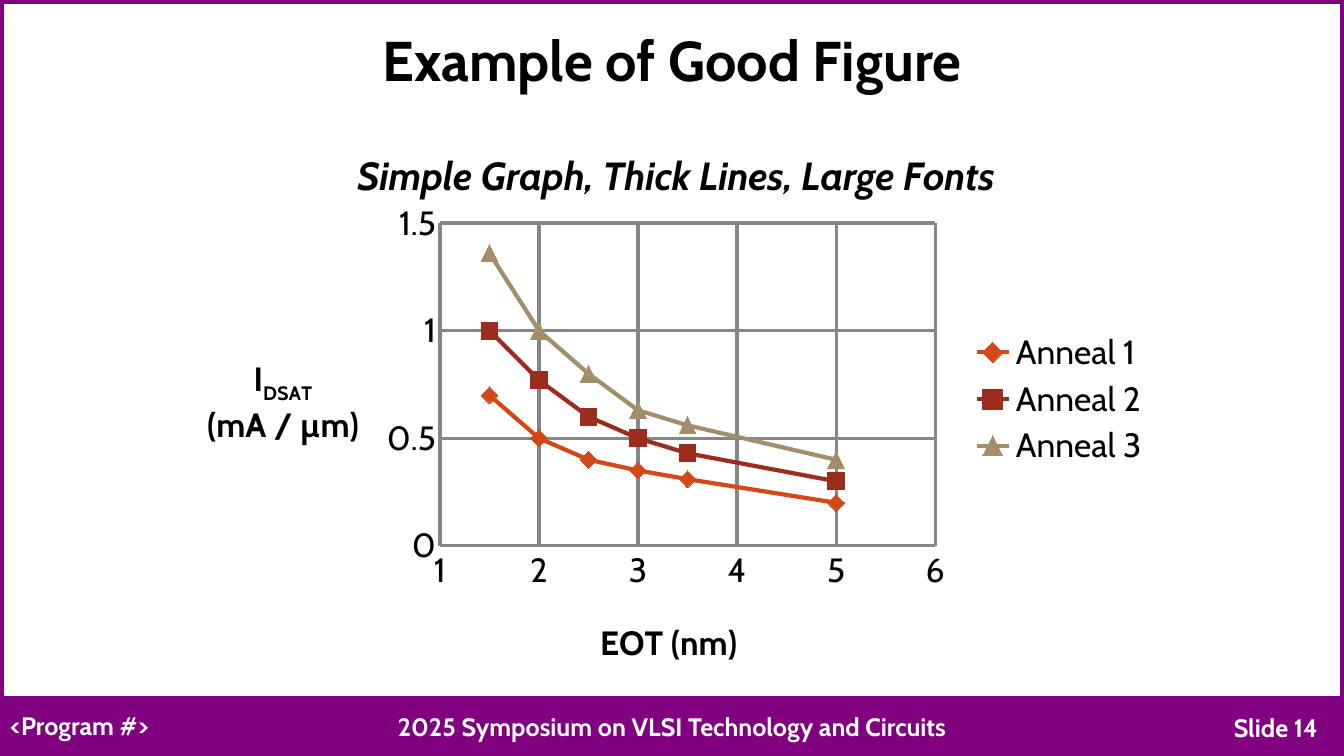
from lxml import etree
from pptx import Presentation
from pptx.chart.data import XyChartData
from pptx.dml.color import RGBColor
from pptx.enum.chart import (XL_CHART_TYPE, XL_LEGEND_POSITION,
                             XL_MARKER_STYLE, XL_TICK_MARK)
from pptx.enum.shapes import MSO_SHAPE
from pptx.enum.text import MSO_ANCHOR, PP_ALIGN
from pptx.oxml.ns import qn
from pptx.util import Inches, Pt

FONT = "Cabin"
PURPLE, WHITE, BLACK, GRAY = "800080", "FFFFFF", "000000", "868686"
EOT = [1.5, 2, 2.5, 3, 3.5, 5]
ANNEALS = [
    ("Anneal 1", [0.7, 0.5, 0.4, 0.35, 0.31, 0.2], "D34817", XL_MARKER_STYLE.DIAMOND),
    ("Anneal 2", [1, 0.77, 0.6, 0.5, 0.43, 0.3], "9B2D1F", XL_MARKER_STYLE.SQUARE),
    ("Anneal 3", [1.36, 1, 0.8, 0.63, 0.56, 0.4], "A28E6A", XL_MARKER_STYLE.TRIANGLE),
]


def color(hex_code):
    return RGBColor.from_string(hex_code)


def style_font(font, size, hex_code=BLACK, bold=False, italic=False):
    font.name, font.size = FONT, Pt(size)
    font.bold, font.italic = bold, italic
    font.color.rgb = color(hex_code)


def style_line(line, hex_code, width):
    line.color.rgb = color(hex_code)
    line.width = Pt(width)


def add_frame(page, left, top, width, height, line_width, fill=None):
    frame = page.shapes.add_shape(MSO_SHAPE.RECTANGLE, Inches(left), Inches(top),
                                  Inches(width), Inches(height))
    frame.shadow.inherit = False
    if fill:
        frame.fill.solid()
        frame.fill.fore_color.rgb = color(fill)
    else:
        frame.fill.background()
    style_line(frame.line, PURPLE, line_width)


def add_text(page, text, left, top, width, height, size, hex_code, align):
    box = page.shapes.add_textbox(Inches(left), Inches(top), Inches(width), Inches(height))
    box.text_frame.text = text
    box.text_frame.word_wrap = True
    box.text_frame.vertical_anchor = MSO_ANCHOR.MIDDLE
    para = box.text_frame.paragraphs[0]
    para.alignment = align
    style_font(para.runs[0].font, size, hex_code, bold=True)


def place(element, after, x, y, w=None, h=None):
    """Fix a chart part at fractions of the chart area."""
    for old in element.findall(qn("c:layout")):
        element.remove(old)
    layout = etree.Element(qn("c:layout"))
    manual = etree.SubElement(layout, qn("c:manualLayout"))
    settings = [("xMode", "edge"), ("yMode", "edge"), ("x", x), ("y", y), ("w", w), ("h", h)]
    if after is None:
        settings.insert(0, ("layoutTarget", "inner"))
        element.insert(0, layout)
    else:
        element.find(qn(after)).addnext(layout)
    for tag, value in settings:
        if value is not None:
            etree.SubElement(manual, qn("c:" + tag)).set("val", str(value))


def set_title(title, lines, size, x, y, italic=False):
    frame = title.text_frame
    frame.text = lines[0]
    for line in lines[1:]:
        frame.add_paragraph().text = line
    frame._txBody.bodyPr.set("rot", "0")
    for para in frame.paragraphs:
        para.alignment = PP_ALIGN.CENTER
        for span in para.runs:
            style_font(span.font, size, bold=True, italic=italic)
    place(title._element, "c:tx", x, y)
    return frame


def style_axis(axis, low, high, step, number_format):
    axis.minimum_scale, axis.maximum_scale, axis.major_unit = low, high, step
    axis.major_tick_mark = axis.minor_tick_mark = XL_TICK_MARK.NONE
    axis.has_major_gridlines = True
    style_line(axis.major_gridlines.format.line, GRAY, 2.25)
    style_line(axis.format.line, GRAY, 2.25)
    axis.tick_labels.number_format = number_format
    axis.tick_labels.number_format_is_linked = False
    style_font(axis.tick_labels.font, 24)


def style_series(series, hex_code, marker_style):
    series.smooth = False
    style_line(series.format.line, hex_code, 3)
    marker = series.marker
    marker.style, marker.size = marker_style, 12
    marker.format.fill.solid()
    marker.format.fill.fore_color.rgb = color(hex_code)
    marker.format.line.color.rgb = color(hex_code)


def add_anneal_chart(page):
    data = XyChartData()
    for name, currents, _, _ in ANNEALS:
        series = data.add_series(name)
        for thickness, current in zip(EOT, currents):
            series.add_data_point(thickness, current)
    chart = page.shapes.add_chart(XL_CHART_TYPE.XY_SCATTER_LINES, Inches(1.83), Inches(1.17),
                                  Inches(9.67), Inches(5.58), data).chart
    style_font(chart.font, 24)
    for series, (_, _, hex_code, marker_style) in zip(chart.plots[0].series, ANNEALS):
        style_series(series, hex_code, marker_style)
    chart.plots[0].vary_by_categories = False

    # Axes and titles
    style_axis(chart.category_axis, 1, 6, 1, "General")
    style_axis(chart.value_axis, 0, 1.5, 0.5, "General")
    chart.has_title = True
    set_title(chart.chart_title, ["Simple Graph, Thick Lines, Large Fonts"], 28,
              0.17, 0.04, italic=True)
    set_title(chart.category_axis.axis_title, ["EOT (nm)"], 24, 0.42, 0.88)
    label = set_title(chart.value_axis.axis_title, ["I", "(mA / µm)"], 24, 0.02, 0.42)
    subscript = label.paragraphs[0].add_run()
    subscript.text = "DSAT"
    style_font(subscript.font, 24, bold=True)
    subscript.font._element.set("baseline", "-25000")

    # Legend and plot area
    chart.has_legend = True
    chart.legend.position = XL_LEGEND_POSITION.RIGHT
    chart.legend.include_in_layout = False
    style_font(chart.legend.font, 24)
    place(chart.legend._element, "c:legendPos", 0.81, 0.37, 0.18, 0.26)
    plot_area = chart._chartSpace.chart.plotArea
    place(plot_area, None, 0.262, 0.187, 0.508, 0.574)
    properties = etree.SubElement(plot_area, qn("c:spPr"))
    fill = etree.SubElement(properties, qn("a:solidFill"))
    etree.SubElement(fill, qn("a:srgbClr")).set("val", WHITE)


def main():
    deck = Presentation()
    deck.slide_width, deck.slide_height = Inches(13.33), Inches(7.5)
    page = deck.slides.add_slide(deck.slide_layouts[6])

    # Footer band and page border
    add_frame(page, 0, 6.92, 13.33, 0.58, 2, PURPLE)
    add_frame(page, 0, 0, 13.33, 7.5, 6)

    # Heading and chart
    add_text(page, "Example of Good Figure", 0.22, 0.25, 12.89, 0.67, 40, BLACK,
             PP_ALIGN.CENTER)
    add_anneal_chart(page)

    # Footer texts
    for text, left, top, width, align in [
        ("2025 Symposium on VLSI Technology and Circuits", 2, 7.01, 9.33, PP_ALIGN.CENTER),
        ("Slide 14", 9.61, 7.02, 3.56, PP_ALIGN.RIGHT),
        ("<Program #>", 0, 7, 4.17, PP_ALIGN.LEFT),
    ]:
        add_text(page, text, left, top, width, 0.4, 18, WHITE, align)

    deck.save("out.pptx")


if __name__ == "__main__":
    main()
